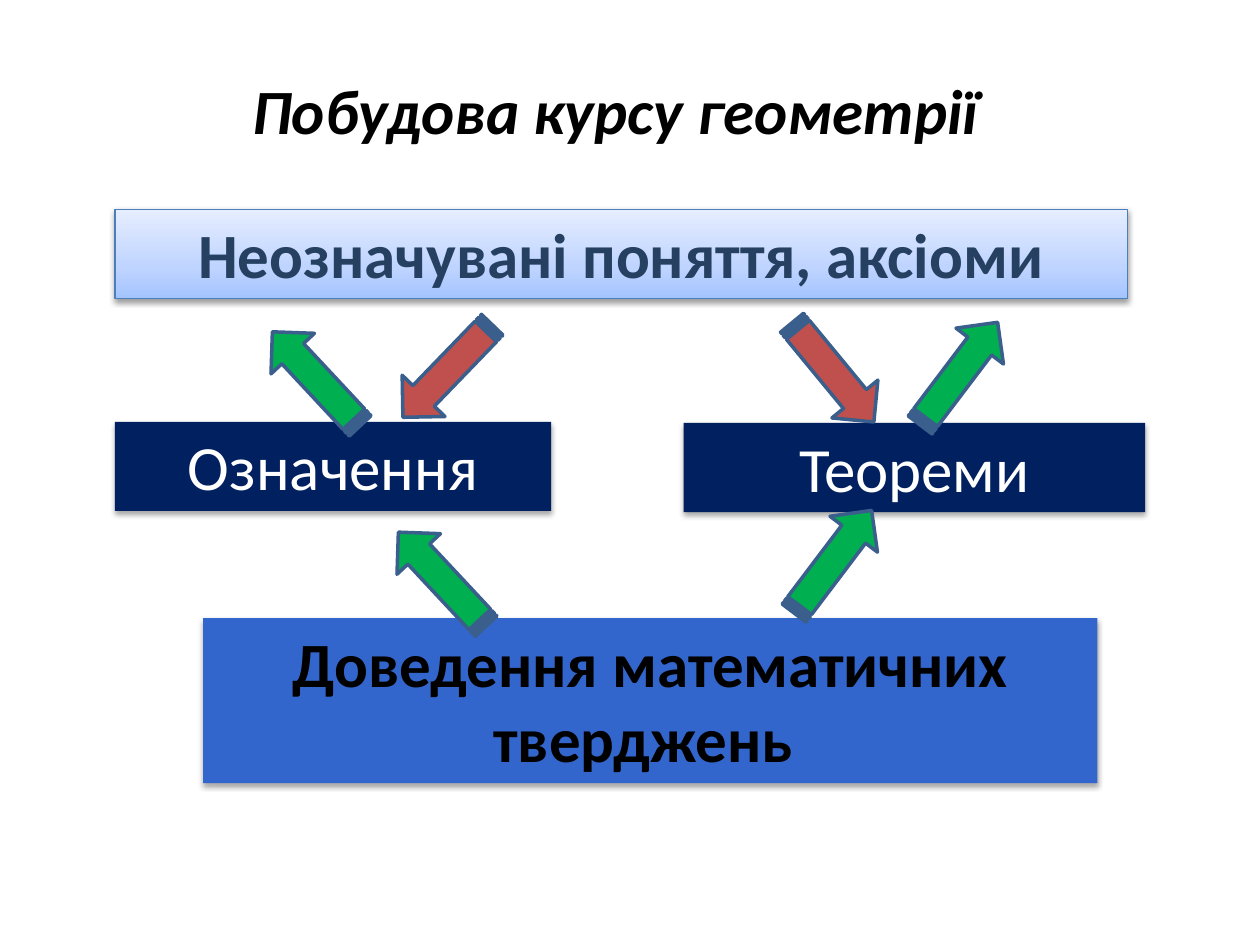
import dataclasses
import typing

import lxml.etree
import pptx
import pptx.dml.color
import pptx.enum.shapes
import pptx.enum.text
import pptx.oxml.ns
import pptx.util

Pt = pptx.util.Pt
qn = pptx.oxml.ns.qn


@dataclasses.dataclass(frozen=True)
class Theme:
    font: str = "Calibri"
    size: float = 36
    black: str = "000000"
    white: str = "FFFFFF"
    axiom_text: str = "254061"
    axiom_line: str = "4B7EBC"
    axiom_stops: tuple = ((0, "A4C4FF"), (35, "BFD4FF"), (100, "E6EEFF"))
    navy: str = "002060"
    blue: str = "3366CC"
    red: str = "C0504D"
    green: str = "00B050"
    arrow_line: str = "3A5F8C"


THEME = Theme()


class Box(typing.NamedTuple):
    text: str
    left: float
    top: float
    width: float
    height: float
    fill: typing.Union[str, tuple]
    color: str
    bold: bool = False
    line: typing.Optional[str] = None
    shadow_alpha: int = 35
    shadow_dist: float = 1.8


class Arrow(typing.NamedTuple):
    left: float
    top: float
    rotation: float
    fill: str


ARROW_WIDTH, ARROW_HEIGHT = 73.5, 34
UP_LEFT, UP_RIGHT = 227, 307.1

BOXES = [
    Box("Неозначувані поняття, аксіоми", 65.7, 119.6, 578.5, 51,
        THEME.axiom_stops, THEME.axiom_text, True, THEME.axiom_line, 38, 1.6),
    Box("Означення", 65.7, 241, 249.3, 51, THEME.navy, THEME.white),
    Box("Теореми", 390.7, 241.7, 263.7, 51, THEME.navy, THEME.white),
    Box("Доведення математичних\nтверджень ", 116.1, 353.2, 511, 94.3,
        THEME.blue, THEME.black, True),
]

ARROWS = [
    Arrow(219, 195, 134, THEME.red),
    Arrow(439.2, 195.8, 50.5, THEME.red),
    Arrow(216, 314, UP_LEFT, THEME.green),
    Arrow(439.2, 304, UP_RIGHT, THEME.green),
    Arrow(144, 199.5, UP_LEFT, THEME.green),
    Arrow(511.2, 196.5, UP_RIGHT, THEME.green),
]


def rgb(value: str) -> pptx.dml.color.RGBColor:
    return pptx.dml.color.RGBColor.from_string(value)


def write_text(sp, text: str, *, color: str, bold: bool = False,
               italic: bool = False) -> None:
    tf = sp.text_frame
    tf.word_wrap = True
    tf.vertical_anchor = pptx.enum.text.MSO_ANCHOR.TOP
    for i, line in enumerate(text.split("\n")):
        p = tf.paragraphs[0] if i == 0 else tf.add_paragraph()
        p.alignment = pptx.enum.text.PP_ALIGN.CENTER
        r = p.add_run()
        r.text = line
        r.font.name = THEME.font
        r.font.size = Pt(THEME.size)
        r.font.bold = bold
        r.font.italic = italic
        r.font.color.rgb = rgb(color)


def add_color(parent, value: str):
    return lxml.etree.SubElement(parent, qn("a:srgbClr"), val=value)


def fill_gradient(sp, stops: tuple) -> None:
    sp.fill.gradient()
    sp.fill.gradient_angle = 90
    gs_list = next(sp._element.spPr.iter(qn("a:gsLst")))
    for gs in list(gs_list):
        gs_list.remove(gs)
    for position, value in stops:
        gs = lxml.etree.SubElement(gs_list, qn("a:gs"), pos=str(position * 1000))
        add_color(gs, value)


def add_shadow(sp, alpha: int, dist: float) -> None:
    effects = sp._element.spPr.find(qn("a:effectLst"))
    shadow = lxml.etree.SubElement(
        effects, qn("a:outerShdw"), blurRad=str(Pt(3.1)), dist=str(Pt(dist)),
        dir="5400000", rotWithShape="0")
    color = add_color(shadow, THEME.black)
    lxml.etree.SubElement(color, qn("a:alpha"), val=str(alpha * 1000))


def add_box(slide, box: Box) -> None:
    sp = slide.shapes.add_shape(
        pptx.enum.shapes.MSO_SHAPE.RECTANGLE,
        Pt(box.left), Pt(box.top), Pt(box.width), Pt(box.height))
    if isinstance(box.fill, tuple):
        fill_gradient(sp, box.fill)
    else:
        sp.fill.solid()
        sp.fill.fore_color.rgb = rgb(box.fill)
    if box.line:
        sp.line.color.rgb = rgb(box.line)
        sp.line.width = Pt(0.75)
    else:
        sp.line.fill.background()
    sp.shadow.inherit = False
    add_shadow(sp, box.shadow_alpha, box.shadow_dist)
    write_text(sp, box.text, color=box.color, bold=box.bold)


def add_arrow(slide, arrow: Arrow) -> None:
    sp = slide.shapes.add_shape(
        pptx.enum.shapes.MSO_SHAPE.STRIPED_RIGHT_ARROW,
        Pt(arrow.left), Pt(arrow.top), Pt(ARROW_WIDTH), Pt(ARROW_HEIGHT))
    sp.rotation = arrow.rotation
    sp.shadow.inherit = False
    sp.fill.solid()
    sp.fill.fore_color.rgb = rgb(arrow.fill)
    sp.line.color.rgb = rgb(THEME.arrow_line)
    sp.line.width = Pt(2)


def main() -> None:
    prs = pptx.Presentation()
    prs.slide_width, prs.slide_height = Pt(720), Pt(540)
    slide = prs.slides.add_slide(prs.slide_layouts[6])
    title = slide.shapes.add_textbox(Pt(99.4), Pt(37.4), Pt(504.7), Pt(51))
    write_text(title, "Побудова курсу геометрії", color=THEME.black,
               bold=True, italic=True)
    for box in BOXES:
        add_box(slide, box)
    for arrow in ARROWS:
        add_arrow(slide, arrow)
    prs.save("out.pptx")


if __name__ == "__main__":
    main()
